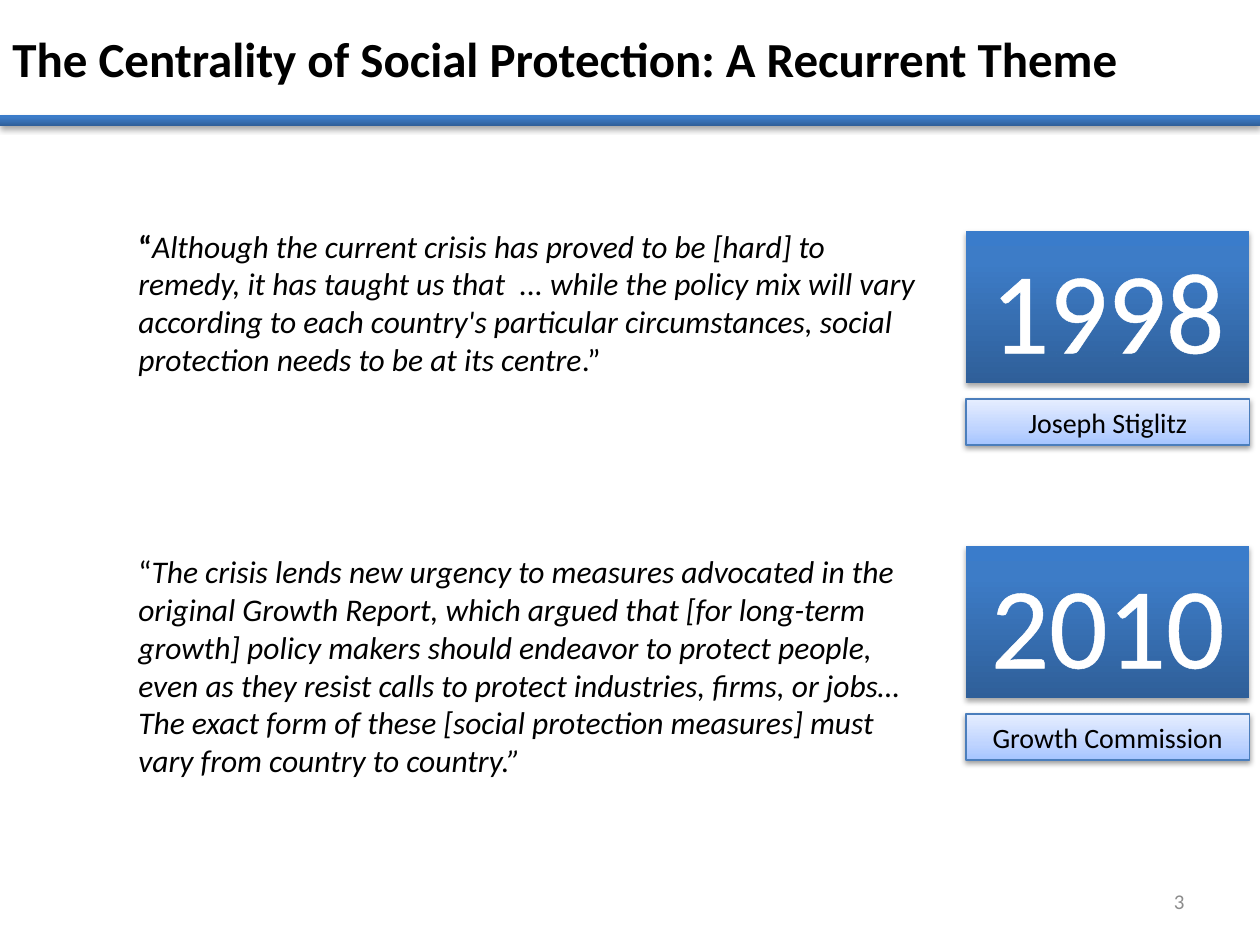
from dataclasses import dataclass

from lxml import etree
from pptx import Presentation
from pptx import util as u
from pptx.dml.color import RGBColor
from pptx.enum import shapes, text
from pptx.oxml import parse_xml
from pptx.oxml.ns import nsdecls, qn

UNIT = u.Inches(1 / 12)
COLS, ROWS = 120, 90


@dataclass(frozen=True)
class Theme:
    """Colours, type sizes and effects of the deck."""

    font: str = "Calibri"
    ink: str = "000000"
    paper: str = "FFFFFF"
    muted: str = "8C8C8C"
    edge: str = "4B7EBC"
    deep: tuple = ((0, "2F5F99"), (80, "3D7CC7"), (100, "3A7CCB"))
    pale: tuple = ((0, "A4C4FF"), (35, "BFD4FF"), (100, "E6EEFF"))
    deep_shadow: tuple = (35, 1.8)
    pale_shadow: tuple = (38, 1.6)
    title: int = 28
    year: int = 66
    quote: int = 18
    name: int = 16
    number: int = 12


T = Theme()


def grid(box):
    """Turn grid columns and rows into slide lengths."""
    return [round(v * UNIT) for v in box]


def write(sp, runs, size, color, align=text.PP_ALIGN.LEFT,
          anchor=text.MSO_ANCHOR.TOP, before=0):
    """Fill a shape with one paragraph of (wording, format) runs."""
    tf = sp.text_frame
    tf.word_wrap = True
    tf.vertical_anchor = anchor
    p = tf.paragraphs[0]
    p.alignment = align
    p.space_before = u.Pt(before)
    for wording, extra in runs:
        r = p.add_run()
        r.text = wording
        for key, value in {"name": T.font, "size": u.Pt(size), **extra}.items():
            setattr(r.font, key, value)
        r.font.color.rgb = RGBColor.from_string(color)
    return p


def label(s, box, runs, size, color, **kw):
    """Add a text box."""
    sp = s.shapes.add_textbox(*grid(box))
    return write(sp, runs, size, color, **kw)


def panel(s, box, stops, shadow, edge=None):
    """Add a rectangle with an upward gradient and a soft shadow."""
    sp = s.shapes.add_shape(shapes.MSO_SHAPE.RECTANGLE, *grid(box))
    sp.fill.background()
    spPr = sp._element.spPr
    gs = "".join(f'<a:gs pos="{pos * 1000}"><a:srgbClr val="{c}"/></a:gs>'
                 for pos, c in stops)
    spPr.replace(spPr.find(qn("a:noFill")), parse_xml(
        f'<a:gradFill {nsdecls("a")} rotWithShape="1"><a:gsLst>{gs}</a:gsLst>'
        '<a:lin ang="16200000" scaled="0"/></a:gradFill>'))
    if edge:
        sp.line.color.rgb = RGBColor.from_string(edge)
        sp.line.width = u.Pt(0.75)
    else:
        sp.line.fill.background()
    sp.shadow.inherit = False
    alpha, dist = shadow
    spPr.find(qn("a:effectLst")).append(parse_xml(
        f'<a:outerShdw {nsdecls("a")} blurRad="{u.Pt(3.1)}" dist="{u.Pt(dist)}" '
        f'dir="5400000" rotWithShape="0"><a:srgbClr val="{T.ink}">'
        f'<a:alpha val="{alpha * 1000}"/></a:srgbClr></a:outerShdw>'))
    return sp


def outline(p, color, width):
    """Draw a line round the letters of a paragraph."""
    for r in p.runs:
        ln = etree.Element(qn("a:ln"), w=str(u.Pt(width)))
        fill = etree.SubElement(ln, qn("a:solidFill"))
        etree.SubElement(fill, qn("a:srgbClr"), val=color)
        r.font._element.insert(0, ln)


def header(s, box, title):
    """Place the title with its band below."""
    x, y, w, h = box
    label(s, (x, y, w, h - 1), [(title, {"bold": True})], T.title, T.ink,
          anchor=text.MSO_ANCHOR.MIDDLE)
    panel(s, (x, y + h - 1, w, 1), T.deep, T.deep_shadow)


def source(s, box, year, name):
    """Place a year panel with its author plate below."""
    x, y, w, h = box
    center = {"align": text.PP_ALIGN.CENTER, "anchor": text.MSO_ANCHOR.MIDDLE}
    sp = panel(s, (x, y, w, 14.5), T.deep, T.deep_shadow)
    outline(write(sp, [(year, {})], T.year, T.paper, **center), T.paper, 1.45)
    sp = panel(s, (x, y + 16, w, h - 16), T.pale, T.pale_shadow, T.edge)
    write(sp, [(name, {})], T.name, T.ink, **center)


def footer(s, box, number):
    """Place the slide number."""
    label(s, box, [(number, {})], T.number, T.muted,
          align=text.PP_ALIGN.RIGHT, anchor=text.MSO_ANCHOR.MIDDLE)


def main():
    """Build and save the slide."""
    prs = Presentation()
    prs.slide_width, prs.slide_height = COLS * UNIT, ROWS * UNIT
    s = prs.slides.add_slide(prs.slide_layouts[6])
    header(s, (0, 0, COLS, 12),
           "The Centrality of Social Protection: A Recurrent Theme")
    italic = {"italic": True}
    first = [
        ("“", {"bold": True}),
        ("Although the current crisis has proved to be [hard] to remedy, it has "
         "taught us that  ... while the policy mix will vary according to each "
         "country's particular circumstances, social protection needs to be at "
         "its centre", italic),
        (".”", {})]
    second = [
        ("“", {}),
        ("The crisis lends new urgency to measures advocated in the original "
         "Growth Report, which argued that [for long-term growth] policy makers "
         "should endeavor to protect people, even as they resist calls to "
         "protect industries, firms, or jobs… The exact form of these [social "
         "protection measures] must vary from country to country.”", italic)]
    label(s, (12, 21, 78, 24), first, T.quote, T.ink, before=3.6)
    label(s, (12, 52, 78, 26.6), second, T.quote, T.ink)
    source(s, (92, 22, 27, 20.4), "1998", "Joseph Stiglitz")
    source(s, (92, 52, 27, 20.4), "2010", "Growth Commission")
    footer(s, (86, 83.4, 28, 4.8), "3")
    prs.save("out.pptx")


if __name__ == "__main__":
    main()
